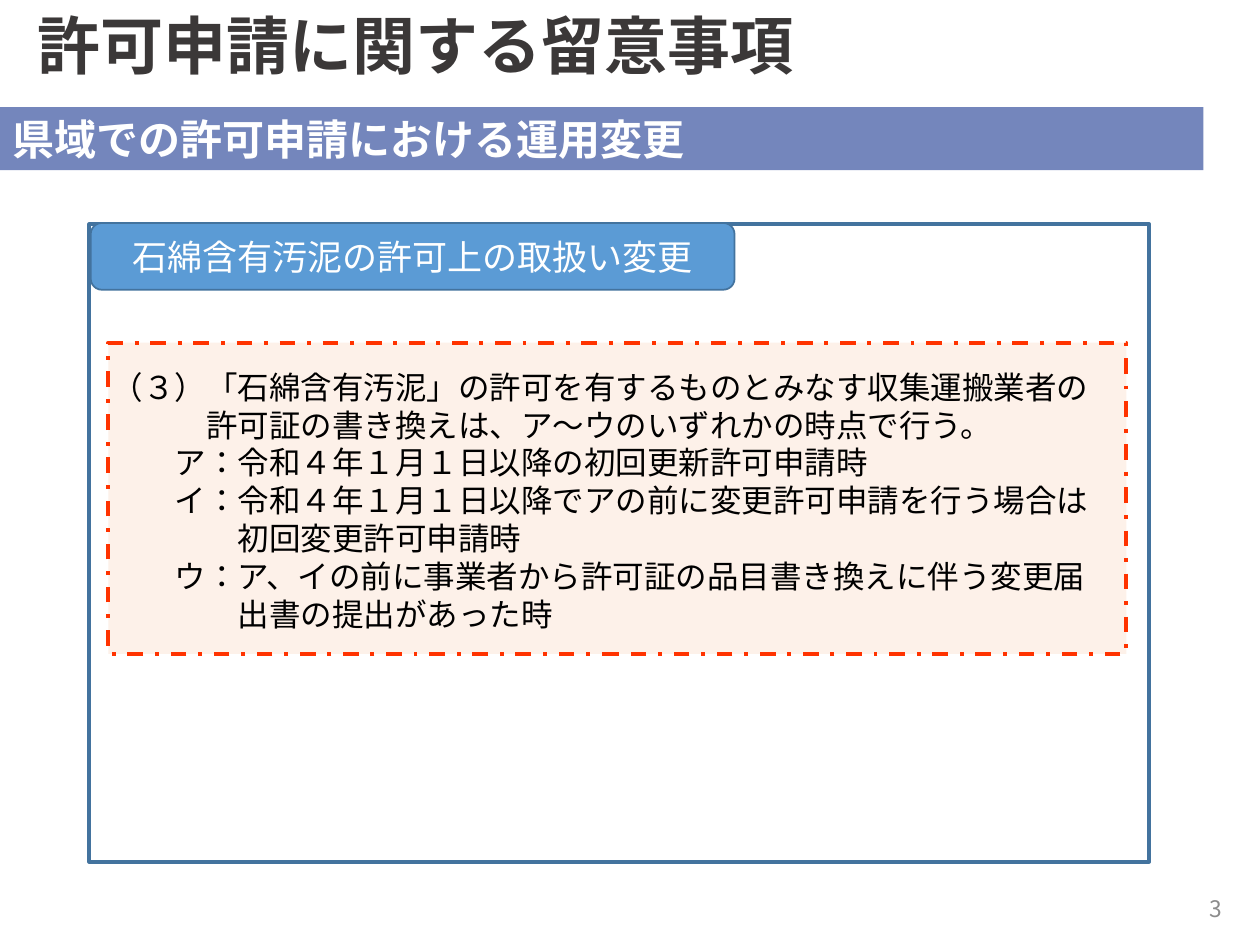
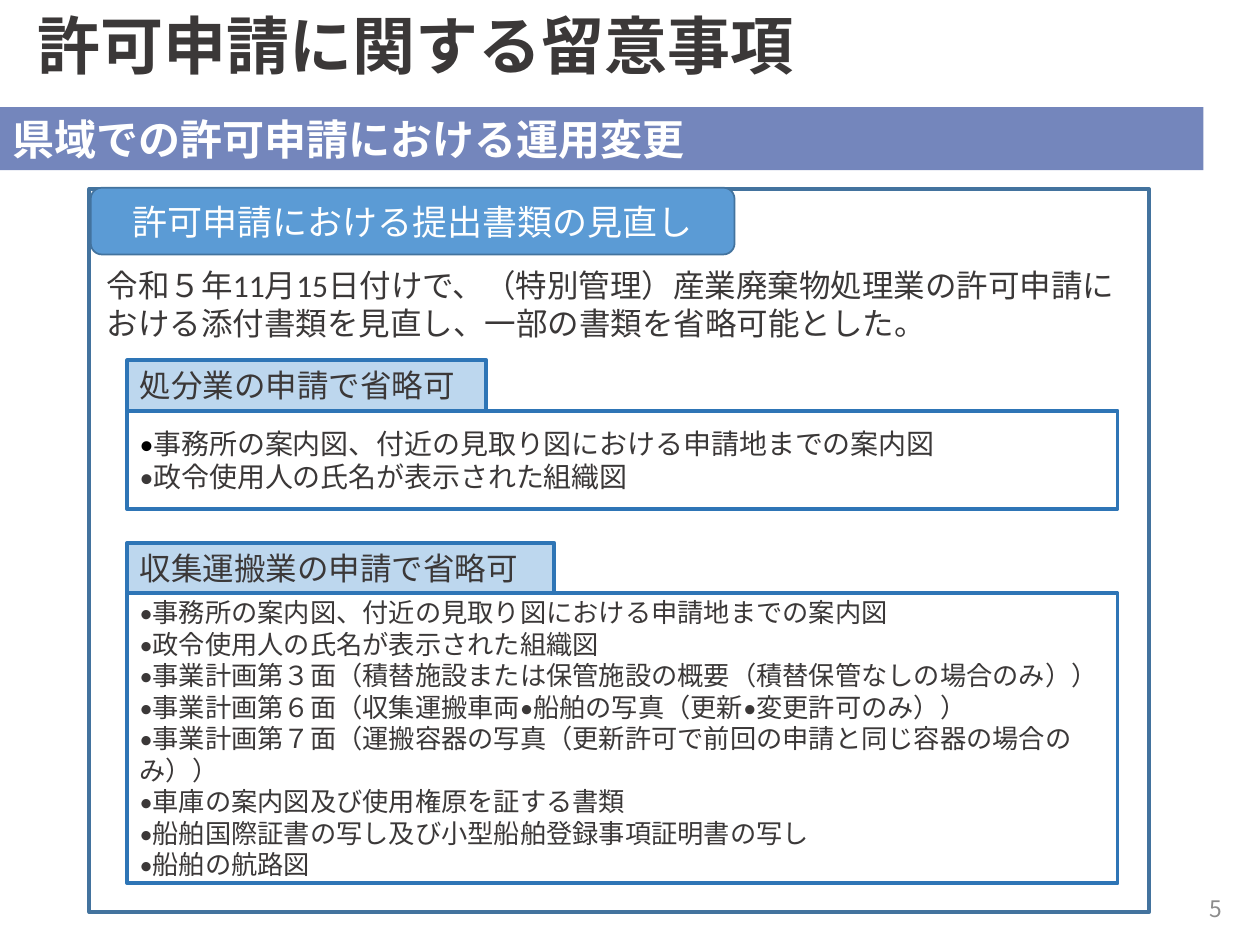
import pptx
import pptx.util
import pptx.dml.color
import pptx.enum.dml
import pptx.enum.lang
import pptx.enum.shapes
import pptx.enum.text
import pptx.oxml.ns
import lxml.etree

Inches = pptx.util.Inches
Pt = pptx.util.Pt
MSO_SHAPE = pptx.enum.shapes.MSO_SHAPE
ALIGN = pptx.enum.text.PP_ALIGN
ANCHOR = pptx.enum.text.MSO_ANCHOR

GOTHIC = "Noto Sans CJK JP"
BODY = "Calibri"
INK, WHITE, BLACK, GREY = "3B3838", "FFFFFF", "000000", "8C8C8C"
BAND, TAB, FRAME_LINE = "7486BC", "5B9BD5", "43739E"
BOX_LINE, LABEL_FILL = "2E75B6", "BDD7EE"
NOTE_FILL, NOTE_LINE = "FDF1E9", "FF3300"
LINE_PITCH = 1.2  # line height as a multiple of the text size
DOT = "•"
DOT_TIGHTEN = -16  # spacing after a dot, in hundredths of the text size


def rgb(value):
    return pptx.dml.color.RGBColor.from_string(value)


def place(sp, left, top, width, height):
    sp.left, sp.top = Inches(left), Inches(top)
    sp.width, sp.height = Inches(width), Inches(height)


def add_run(p, text, size, font, color, bold=False):
    r = p.add_run()
    r.text = text
    r.font.size = Pt(size)
    r.font.name = font
    r.font.bold = bold
    r.font.color.rgb = rgb(color)
    r.font.language_id = pptx.enum.lang.MSO_LANGUAGE_ID.JAPANESE
    props = r._r.get_or_add_rPr()
    ea = lxml.etree.SubElement(props, pptx.oxml.ns.qn("a:ea"))
    ea.set("typeface", font)
    if text == DOT:
        props.set("spc", str(DOT_TIGHTEN * size))


def write(sp, lines, size, font=BODY, color=INK, bold=False,
          align=ALIGN.LEFT, anchor=ANCHOR.TOP, indents=()):
    """Write one paragraph per line; indents count full-width characters."""
    tf = sp.text_frame
    tf.word_wrap = True
    tf.auto_size = pptx.enum.text.MSO_AUTO_SIZE.NONE
    tf.vertical_anchor = anchor
    for i, line in enumerate(lines):
        p = tf.paragraphs[0] if i == 0 else tf.add_paragraph()
        p.alignment = align
        p.line_spacing = Pt(size * LINE_PITCH)
        p.space_before = p.space_after = Pt(0)
        if indents:
            p._p.get_or_add_pPr().set("marL", str(Pt(size * indents[i])))
        # Dots get runs of their own so that they can be set tighter
        for j, part in enumerate(line.split(DOT)):
            if j:
                add_run(p, DOT, size, font, color, bold)
            if part:
                add_run(p, part, size, font, color, bold)


def add_box(slide, at, fill, line=None, weight=2.25, kind=MSO_SHAPE.RECTANGLE):
    sp = slide.shapes.add_shape(kind, *map(Inches, at))
    sp.shadow.inherit = False
    sp.fill.solid()
    sp.fill.fore_color.rgb = rgb(fill)
    if line:
        sp.line.color.rgb = rgb(line)
        sp.line.width = Pt(weight)
    else:
        sp.line.fill.background()
    return sp


def add_text(slide, at, lines, size, **style):
    sp = slide.shapes.add_textbox(*map(Inches, at))
    write(sp, lines, size, **style)


def add_base(prs, number):
    """Start a slide with the shared title, band and page number."""
    slide = prs.slides.add_slide(prs.slide_layouts[5])
    title = slide.shapes.title
    place(title, 0.2, 0, 9, 0.71)
    write(title, ["許可申請に関する留意事項"], 36, font=GOTHIC, bold=True)
    band = add_box(slide, (0, 0.85, 9.55, 0.5), BAND)
    write(band, ["県域での許可申請における運用変更"], 24, font=GOTHIC,
          color=WHITE, bold=True)
    add_text(slide, (7.55, 7.01, 2.25, 0.4), [number], 13, font=GOTHIC,
             color=GREY, align=ALIGN.RIGHT, anchor=ANCHOR.MIDDLE)
    return slide


def add_frame(slide, top, height, heading):
    """Outlined area with a rounded heading tab at its top left."""
    add_box(slide, (0.71, top, 8.41, height), WHITE, FRAME_LINE)
    tab = add_box(slide, (0.72, top - 0.01, 5.11, 0.53), TAB, FRAME_LINE, 1,
                  MSO_SHAPE.ROUNDED_RECTANGLE)
    write(tab, [heading], 20, color=WHITE, align=ALIGN.CENTER,
          anchor=ANCHOR.MIDDLE)


def add_omission_list(slide, top, height, label, label_width, items, size):
    """Label with a box of omittable documents directly below it."""
    body = add_box(slide, (1.01, top + 0.4, 7.86, height), WHITE, BOX_LINE)
    write(body, [DOT + item for item in items], size, anchor=ANCHOR.MIDDLE)
    head = add_box(slide, (1.01, top, label_width, 0.4), LABEL_FILL, BOX_LINE)
    write(head, [label], 18)
    return body


def add_sludge_slide(prs):
    slide = add_base(prs, "3")
    add_frame(slide, 1.78, 5.06, "石綿含有汚泥の許可上の取扱い変更")
    note = add_box(slide, (0.86, 2.72, 8.08, 2.47), NOTE_FILL, NOTE_LINE)
    note.line.dash_style = pptx.enum.dml.MSO_LINE.DASH_DOT
    rules = [
        (0, "（３）「石綿含有汚泥」の許可を有するものとみなす収集運搬業者の"),
        (3, "許可証の書き換えは、ア～ウのいずれかの時点で行う。"),
        (2, "ア：令和４年１月１日以降の初回更新許可申請時"),
        (2, "イ：令和４年１月１日以降でアの前に変更許可申請を行う場合は"),
        (4, "初回変更許可申請時"),
        (2, "ウ：ア、イの前に事業者から許可証の品目書き換えに伴う変更届"),
        (4, "出書の提出があった時"),
    ]
    indents, lines = zip(*rules)
    add_text(slide, (0.79, 2.87, 8.1, 2.22), lines, 18, font=GOTHIC,
             color=BLACK, indents=indents)


def add_documents_slide(prs):
    slide = add_base(prs, "5")
    add_frame(slide, 1.5, 5.74, "許可申請における提出書類の見直し")
    add_text(slide, (0.75, 2.06, 8.33, 0.71),
             ["令和５年11月15日付けで、（特別管理）産業廃棄物処理業の許可申請"
              "における添付書類を見直し、一部の書類を省略可能とした。"], 18)
    common = ["事務所の案内図、付近の見取り図における申請地までの案内図",
              "政令使用人の氏名が表示された組織図"]
    transport = [
        "事業計画第３面（積替施設または保管施設の概要（積替保管なしの場合のみ））",
        "事業計画第６面（収集運搬車両•船舶の写真（更新•変更許可のみ））",
        "事業計画第７面（運搬容器の写真（更新許可で前回の申請と同じ容器の場合のみ））",
        "車庫の案内図及び使用権原を証する書類",
        "船舶国際証書の写し及び小型船舶登録事項証明書の写し",
        "船舶の航路図",
    ]
    disposal = add_omission_list(slide, 2.86, 0.78, "処分業の申請で省略可",
                                 2.85, common, 16)
    first_dot = disposal.text_frame.paragraphs[0].runs[0]
    first_dot.font.color.rgb = rgb(BLACK)
    add_omission_list(slide, 4.31, 2.3, "収集運搬業の申請で省略可", 3.39,
                      common + transport, 15)


def main():
    prs = pptx.Presentation()
    prs.slide_width, prs.slide_height = Inches(10), Inches(7.5)
    add_sludge_slide(prs)
    add_documents_slide(prs)
    prs.save("out.pptx")


if __name__ == "__main__":
    main()
